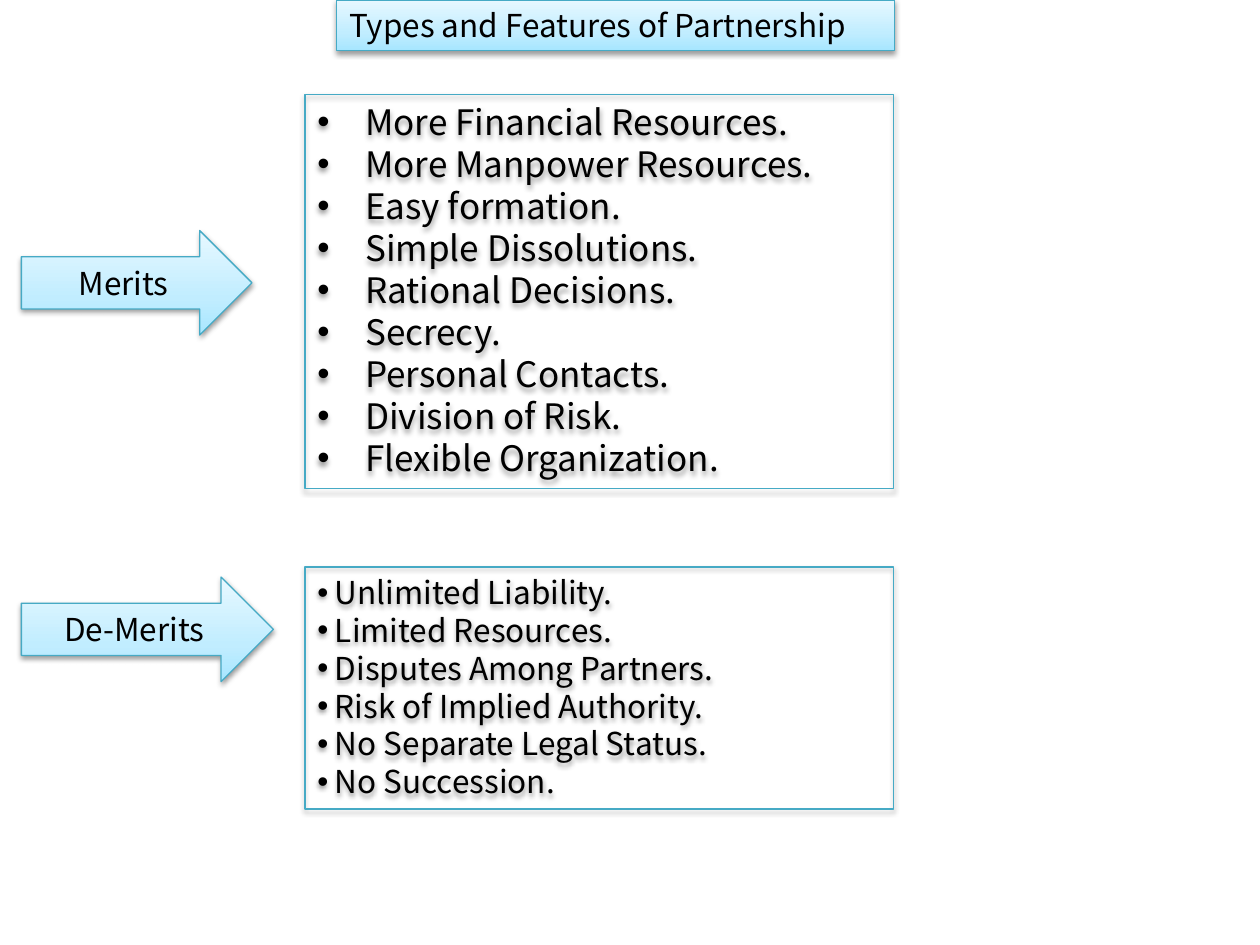
from dataclasses import dataclass

from pptx import Presentation
from pptx import util as u
from pptx.dml.color import RGBColor
from pptx.enum import shapes, text
from pptx.oxml import parse_xml
from pptx.oxml.ns import nsdecls, qn

FONT = "Noto Sans CJK KR"
INK, EDGE = "000000", "46AAC5"
STOPS = ((0, "A7E6FF"), (35, "C1EDFF"), (100, "E7F8FF"))


@dataclass
class Arrow:
    label: str
    top: float
    width: float


@dataclass
class Panel:
    top: float
    height: float
    size: int
    indent: float
    items: tuple[str, ...]


ARROWS = (Arrow("De-Merits", 4.58, 2), Arrow("Merits", 1.83, 1.83))
PANELS = (
    Panel(0.75, 3.13, 20, 0.38, (
        "More Financial Resources.", "More Manpower Resources.",
        "Easy formation.", "Simple Dissolutions.", "Rational Decisions.",
        "Secrecy.", "Personal Contacts.", "Division of Risk.",
        "Flexible Organization.")),
    Panel(4.5, 1.92, 18, 0.14, (
        "Unlimited Liability.", "Limited Resources.",
        "Disputes Among Partners.", "Risk of Implied Authority.",
        "No Separate Legal Status.", "No Succession.")),
)


def color(code: str) -> RGBColor:
    return RGBColor.from_string(code)


def style(shape, filled: bool) -> None:
    """Give a shape its fill, thin edge and soft shadow."""
    if filled:
        shape.fill.gradient()
        shape.fill.gradient_angle = 90
        stops = shape._element.spPr.find(".//" + qn("a:gsLst"))
        for old in list(stops):
            stops.remove(old)
        for pos, code in STOPS:
            stops.append(parse_xml(
                f'<a:gs {nsdecls("a")} pos="{pos * 1000}">'
                f'<a:srgbClr val="{code}"/></a:gs>'))
    else:
        shape.fill.background()
    shape.line.color.rgb = color(EDGE)
    shape.line.width = u.Pt(0.75)
    shape.shadow.inherit = False
    shape._element.spPr.find(qn("a:effectLst")).append(parse_xml(
        f'<a:outerShdw {nsdecls("a")} blurRad="{u.Pt(3.1)}" '
        f'dist="{u.Pt(1.6)}" dir="5400000" rotWithShape="0">'
        f'<a:srgbClr val="{INK}"><a:alpha val="38000"/></a:srgbClr>'
        '</a:outerShdw>'))


def write(para, words: str, size: int, align) -> None:
    para.alignment = align
    para.line_spacing = u.Pt(size * 1.2)
    run = para.add_run()
    run.text = words
    run.font.name = FONT
    run.font.size = u.Pt(size)
    run.font.color.rgb = color(INK)


def bullet(para, indent: float) -> None:
    props = para._p.get_or_add_pPr()
    props.set("marL", str(u.Inches(indent)))
    props.set("indent", str(-u.Inches(indent)))
    props.append(parse_xml(f'<a:buFont {nsdecls("a")} typeface="Arial"/>'))
    props.append(parse_xml(f'<a:buChar {nsdecls("a")} char="•"/>'))


def add_title(slide, words: str) -> None:
    title = slide.shapes.title
    title.left, title.top = u.Inches(2.67), u.Inches(0)
    title.width, title.height = u.Inches(4.43), u.Inches(0.4)
    style(title, True)
    frame = title.text_frame
    frame.word_wrap = True
    frame.auto_size = text.MSO_AUTO_SIZE.NONE
    frame.vertical_anchor = text.MSO_ANCHOR.TOP
    write(frame.paragraphs[0], words, 18, text.PP_ALIGN.LEFT)


def add_arrow(slide, arrow: Arrow) -> None:
    shape = slide.shapes.add_shape(
        shapes.MSO_SHAPE.RIGHT_ARROW, u.Inches(0.17), u.Inches(arrow.top),
        u.Inches(arrow.width), u.Inches(0.83))
    style(shape, True)
    frame = shape.text_frame
    frame.vertical_anchor = text.MSO_ANCHOR.MIDDLE
    write(frame.paragraphs[0], arrow.label, 18, text.PP_ALIGN.CENTER)


def add_panel(slide, panel: Panel) -> None:
    shape = slide.shapes.add_shape(
        shapes.MSO_SHAPE.RECTANGLE, u.Inches(2.42), u.Inches(panel.top),
        u.Inches(4.67), u.Inches(panel.height))
    style(shape, False)
    frame = shape.text_frame
    frame.word_wrap = True
    frame.vertical_anchor = text.MSO_ANCHOR.TOP
    for i, item in enumerate(panel.items):
        para = frame.add_paragraph() if i else frame.paragraphs[0]
        bullet(para, panel.indent)
        write(para, item, panel.size, text.PP_ALIGN.LEFT)


def main() -> None:
    deck = Presentation()
    deck.slide_width, deck.slide_height = u.Inches(10), u.Inches(7.5)
    slide = deck.slides.add_slide(deck.slide_layouts[5])
    # Heading
    add_title(slide, "Types and Features of Partnership")
    # Arrows point at the lists
    for arrow in ARROWS:
        add_arrow(slide, arrow)
    # Framed lists
    for panel in PANELS:
        add_panel(slide, panel)
    deck.save("out.pptx")


if __name__ == "__main__":
    main()
